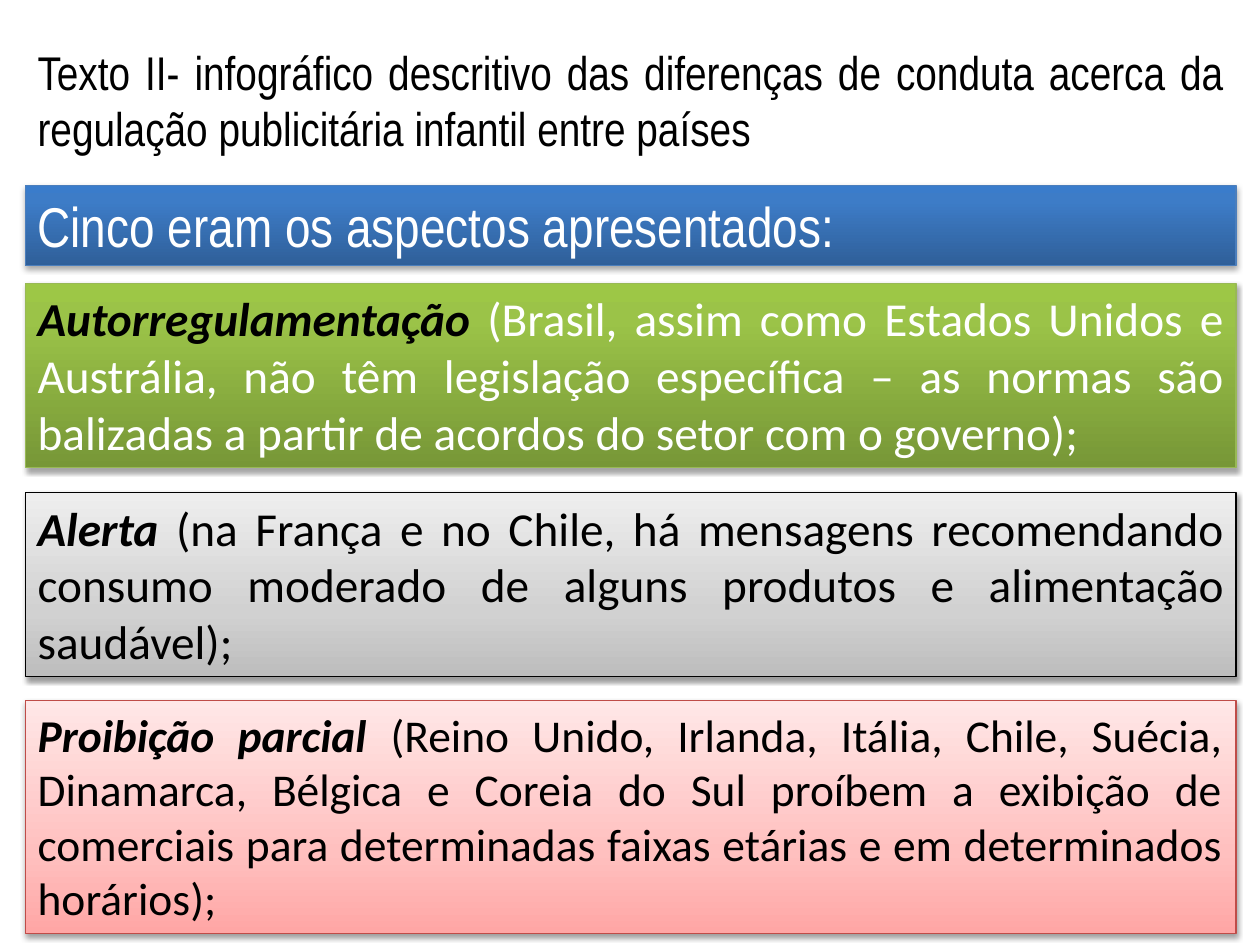
from dataclasses import dataclass

import pptx
import pptx.dml.color
import pptx.enum.shapes
import pptx.enum.text
import pptx.oxml
import pptx.oxml.ns
import pptx.util
from pptx.dml.color import RGBColor
from pptx.util import Inches

BLACK = RGBColor(0x00, 0x00, 0x00)
WHITE = RGBColor(0xFF, 0xFF, 0xFF)
BLUE_LINE = RGBColor(0x4B, 0x7E, 0xBC)
GREEN_LINE = RGBColor(0x98, 0xB9, 0x55)
RED_LINE = RGBColor(0xBF, 0x4C, 0x48)

# Gradient stops (percent, colour), running from the bottom edge to the top
BLUE_STOPS = ((0, RGBColor(0x2F, 0x5F, 0x99)), (80, RGBColor(0x3D, 0x7C, 0xC7)),
              (100, RGBColor(0x3A, 0x7C, 0xCB)))
GREEN_STOPS = ((0, RGBColor(0x77, 0x97, 0x37)), (80, RGBColor(0x9B, 0xC3, 0x48)),
               (100, RGBColor(0x9D, 0xC7, 0x46)))
GREY_STOPS = ((0, RGBColor(0xBD, 0xBD, 0xBD)), (35, RGBColor(0xD1, 0xD1, 0xD1)),
              (100, RGBColor(0xEE, 0xEE, 0xEE)))
RED_STOPS = ((0, RGBColor(0xFF, 0xA6, 0xA5)), (35, RGBColor(0xFF, 0xC0, 0xBF)),
             (100, RGBColor(0xFF, 0xE7, 0xE7)))

LEFT = Inches(0.2)
WIDTH = Inches(9.61)
HEADING_FONT = "Arial Narrow"
BODY_FONT = "Calibri"


@dataclass(frozen=True)
class Band:
    top: float
    height: float
    term: str
    text: str
    font: str
    size: int
    color: RGBColor
    stops: tuple
    line: RGBColor
    shadow_opacity: int
    shadow_distance: float


BANDS = (
    Band(1.47, 0.64, "", "Cinco eram os aspectos apresentados:",
         HEADING_FONT, 32, WHITE, BLUE_STOPS, BLUE_LINE, 35, 1.8),
    Band(2.25, 1.46, "Autorregulamentação ",
         "(Brasil, assim como Estados Unidos e Austrália, não têm legislação específica"
         " – as normas são balizadas a partir de acordos do setor com o governo);",
         BODY_FONT, 27, WHITE, GREEN_STOPS, GREEN_LINE, 35, 1.8),
    Band(3.91, 1.46, "Alerta ",
         "(na França e no Chile, há mensagens recomendando consumo moderado de alguns"
         " produtos e alimentação saudável);",
         BODY_FONT, 27, BLACK, GREY_STOPS, BLACK, 38, 1.6),
    Band(5.56, 1.85, "Proibição parcial ",
         "(Reino Unido, Irlanda, Itália, Chile, Suécia, Dinamarca, Bélgica e Coreia do Sul"
         " proíbem a exibição de comerciais para determinadas faixas etárias e em"
         " determinados horários);",
         BODY_FONT, 26, BLACK, RED_STOPS, RED_LINE, 38, 1.6),
)


def set_gradient(shape, stops: tuple) -> None:
    """Fill the shape with any number of stops, from bottom to top."""
    stop_xml = "".join(
        f'<a:gs pos="{percent * 1000}"><a:srgbClr val="{color}"/></a:gs>'
        for percent, color in stops)
    gradient = pptx.oxml.parse_xml(
        f'<a:gradFill {pptx.oxml.ns.nsdecls("a")} rotWithShape="1">'
        f'<a:gsLst>{stop_xml}</a:gsLst><a:lin ang="16200000" scaled="0"/></a:gradFill>')
    geometry = shape._element.spPr.find(pptx.oxml.ns.qn("a:prstGeom"))
    geometry.addnext(gradient)


def set_shadow(shape, opacity: int, distance: float) -> None:
    shape.shadow.inherit = False
    effects = shape._element.spPr.find(pptx.oxml.ns.qn("a:effectLst"))
    effects.append(pptx.oxml.parse_xml(
        f'<a:outerShdw {pptx.oxml.ns.nsdecls("a")} blurRad="{pptx.util.Pt(3.1)}"'
        f' dist="{pptx.util.Pt(distance)}" dir="5400000" rotWithShape="0">'
        f'<a:srgbClr val="{BLACK}"><a:alpha val="{opacity * 1000}"/></a:srgbClr>'
        '</a:outerShdw>'))


def write_text(shape, text: str, font: str, size: int, color: RGBColor,
               term: str = "") -> None:
    """Write justified text, led by an optional black bold italic term."""
    frame = shape.text_frame
    frame.word_wrap = True
    frame.auto_size = pptx.enum.text.MSO_AUTO_SIZE.SHAPE_TO_FIT_TEXT
    frame.vertical_anchor = pptx.enum.text.MSO_ANCHOR.TOP
    paragraph = frame.paragraphs[0]
    paragraph.alignment = pptx.enum.text.PP_ALIGN.JUSTIFY
    paragraph.font.name = font
    paragraph.font.size = pptx.util.Pt(size)
    paragraph.font.color.rgb = color
    if term:
        run = paragraph.add_run()
        run.text = term
        run.font.bold = run.font.italic = True
        run.font.color.rgb = BLACK
    paragraph.add_run().text = text


def add_band(slide, band: Band) -> None:
    shape = slide.shapes.add_shape(
        pptx.enum.shapes.MSO_SHAPE.RECTANGLE,
        LEFT, Inches(band.top), WIDTH, Inches(band.height))
    set_gradient(shape, band.stops)
    shape.line.color.rgb = band.line
    shape.line.width = pptx.util.Pt(0.75)
    set_shadow(shape, band.shadow_opacity, band.shadow_distance)
    write_text(shape, band.text, band.font, band.size, band.color, band.term)


def main() -> None:
    presentation = pptx.Presentation()
    presentation.slide_width = Inches(10)
    presentation.slide_height = Inches(7.5)
    slide = presentation.slides.add_slide(presentation.slide_layouts[6])

    title = slide.shapes.add_textbox(LEFT, Inches(0.29), WIDTH, Inches(1.01))
    write_text(title, "Texto II- infográfico descritivo das diferenças de conduta acerca da"
               " regulação publicitária infantil entre países", HEADING_FONT, 27, BLACK)
    for band in BANDS:
        add_band(slide, band)
    presentation.save("out.pptx")


if __name__ == "__main__":
    main()
